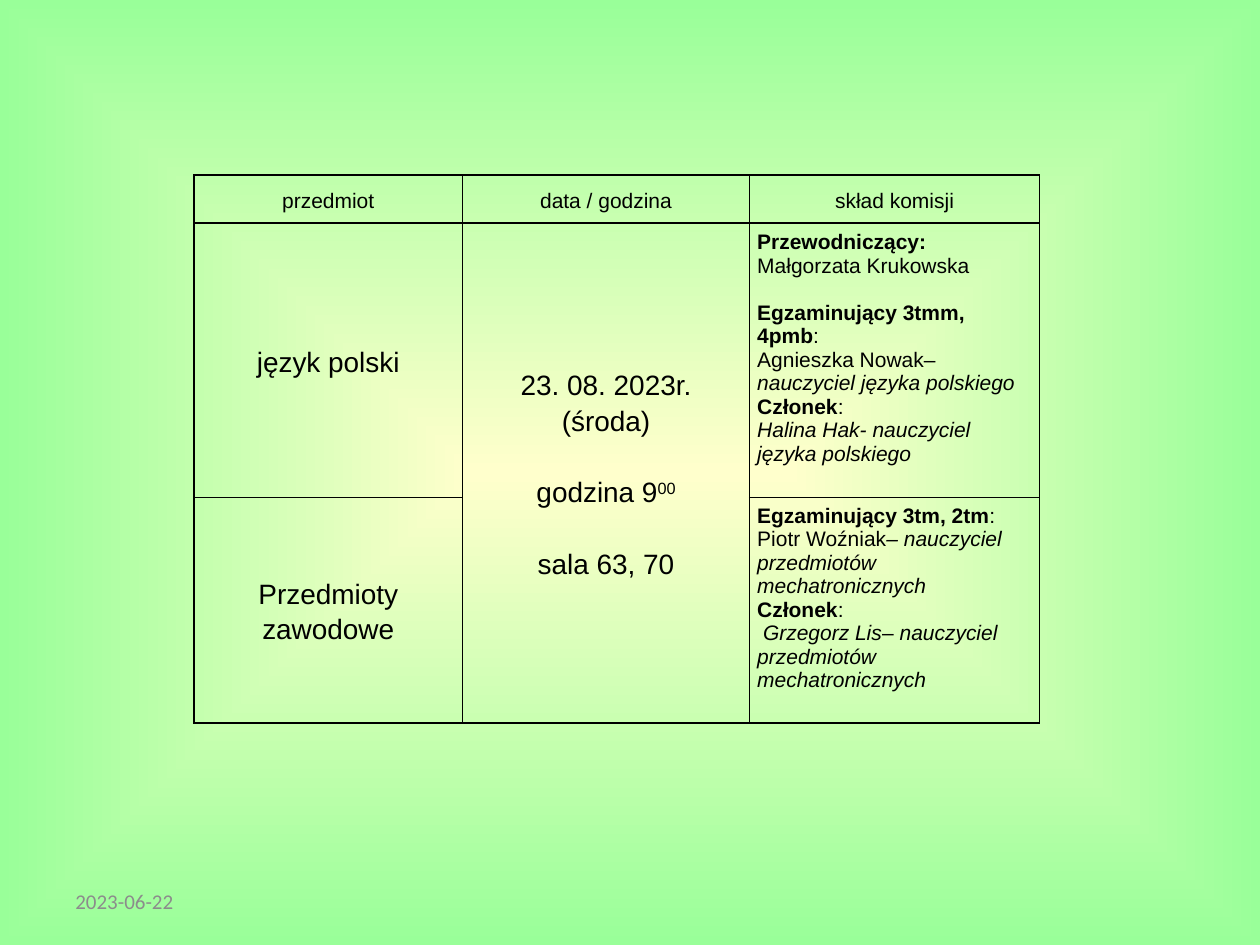
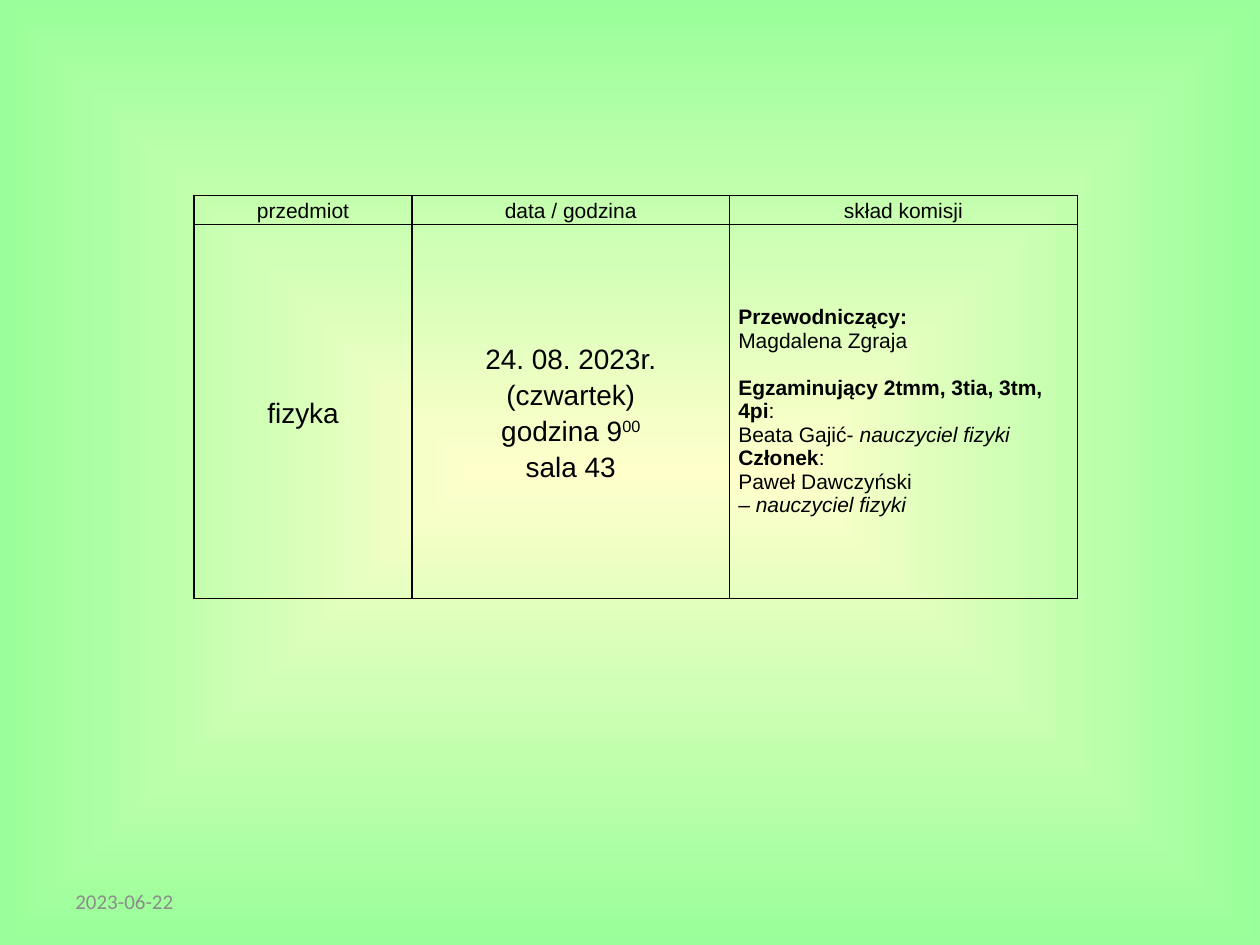
from dataclasses import dataclass

from lxml.etree import SubElement
from pptx import Presentation
from pptx.dml.color import RGBColor as Color
from pptx.enum.text import MSO_ANCHOR as Anchor, PP_ALIGN as Align
from pptx.oxml import parse_xml
from pptx.oxml.ns import nsdecls, qn
from pptx.util import Inches, Pt


@dataclass(frozen=True)
class Theme:
    centre: str = "FFFFCC"
    edge: str = "99FF99"
    ink: str = "000000"
    muted: str = "8C8C8C"
    body_font: str = "Arial"
    date_font: str = "Calibri"
    small: int = 12
    large: int = 16
    centred_spacing: float = 1.15
    small_gap: float = 13.4
    large_gap: float = 20.5
    border: float = 1


THEME = Theme()
DATE = "2023-06-22"
HEADINGS = ["przedmiot", "data / godzina", "skład komisji"]
BOLD, ITALIC, RAISED, GAP = "bold", "italic", "raised", "gap"

HOUR = ["godzina 9", ("00", RAISED)]
CHAIR = [("Przewodniczący:", BOLD)]
MEMBER = [("Członek", BOLD), ":"]

EXAMS = [
    {
        "origin": (1.54, 1.39),
        "columns": [2.13, 2.28, 2.3],
        "rows": [0.38, 2.15, 1.71],
        "inset": 0.06,
        "foot": 0.19,
        "subjects": ["język polski", "Przedmioty zawodowe"],
        "time": [["23. 08. 2023r."], ["(środa)"], GAP, HOUR, GAP, ["sala 63, 70"]],
        "boards": [
            [
                CHAIR,
                ["Małgorzata Krukowska"],
                GAP,
                [("Egzaminujący 3tmm, 4pmb", BOLD), ":"],
                ["Agnieszka Nowak– ", ("nauczyciel języka polskiego", ITALIC)],
                MEMBER,
                [("Halina Hak- nauczyciel języka polskiego", ITALIC)],
            ],
            [
                [("Egzaminujący 3tm, 2tm", BOLD), ":"],
                ["Piotr Woźniak", ("– nauczyciel przedmiotów mechatronicznych", ITALIC)],
                MEMBER,
                [(" Grzegorz Lis", ITALIC), "– ", ("nauczyciel", ITALIC)],
                [("przedmiotów mechatronicznych", ITALIC)],
            ],
        ],
    },
    {
        "origin": (1.54, 1.55),
        "columns": [1.73, 2.52, 2.76],
        "rows": [0.21, 2.97],
        "inset": 0.07,
        "foot": 0,
        "subjects": ["fizyka"],
        "time": [["24. 08. 2023r."], ["(czwartek)"], HOUR, ["sala 43"]],
        "boards": [
            [
                CHAIR,
                ["Magdalena Zgraja"],
                GAP,
                [("Egzaminujący 2tmm, 3tia, 3tm, 4pi", BOLD), ":"],
                ["Beata Gajić- ", ("nauczyciel fizyki", ITALIC)],
                MEMBER,
                ["Paweł Dawczyński"],
                [("– nauczyciel fizyki", ITALIC)],
            ],
        ],
    },
]


def apply(target, values):
    for name, value in values.items():
        setattr(target, name, value)


def paint_background(master):
    fill = master.background.fill
    fill.gradient()
    for stop, tone, position in zip(fill.gradient_stops, (THEME.centre, THEME.edge), (0, 1)):
        stop.color.rgb = Color.from_string(tone)
        stop.position = position
    direction = next(master._element.iter(qn("a:lin")))
    direction.getparent().replace(direction, parse_xml(
        f'<a:path {nsdecls("a")} path="shape">'
        '<a:fillToRect l="50000" t="50000" r="50000" b="50000"/></a:path>'))


def add_span(para, text, style, size, font, colour):
    span = para.add_run()
    span.text = text
    apply(span.font, {"name": font, "size": Pt(size),
                      "bold": style == BOLD, "italic": style == ITALIC})
    span.font.color.rgb = Color.from_string(colour)
    if style == RAISED:
        span._r.get_or_add_rPr().set("baseline", "30000")


def write(frame, lines, size, centred):
    frame.word_wrap = True
    para, gap_due = None, False
    for line in lines:
        if line == GAP:
            gap_due = True
            continue
        para = frame.add_paragraph() if para else frame.paragraphs[0]
        apply(para, {"alignment": Align.CENTER if centred else Align.LEFT,
                     "line_spacing": THEME.centred_spacing if centred else 1.0})
        if gap_due:
            para.space_before = Pt(THEME.large_gap if centred else THEME.small_gap)
            gap_due = False
        for part in line:
            text, style = (part, None) if isinstance(part, str) else part
            add_span(para, text, style, size, THEME.body_font, THEME.ink)


def frame_cell(cell, inset):
    apply(cell, {"margin_left": Inches(inset), "margin_right": Inches(inset),
                 "margin_top": 0, "margin_bottom": 0,
                 "vertical_anchor": Anchor.MIDDLE})
    properties = cell._tc.get_or_add_tcPr()
    for side in ("a:lnL", "a:lnR", "a:lnT", "a:lnB"):
        line = SubElement(properties, qn(side), w=str(Pt(THEME.border)))
        solid = SubElement(line, qn("a:solidFill"))
        SubElement(solid, qn("a:srgbClr"), val=THEME.ink)
    cell.fill.background()


def add_exam_table(page, exam):
    columns, rows = exam["columns"], exam["rows"]
    left, top = exam["origin"]
    table = page.shapes.add_table(
        len(rows), len(columns), Inches(left), Inches(top),
        Inches(sum(columns)), Inches(sum(rows))).table
    apply(table, {"first_row": False, "horz_banding": False})
    for column, width in zip(table.columns, columns):
        column.width = Inches(width)
    for row, height in zip(table.rows, rows):
        row.height = Inches(height)
    for cell in table.iter_cells():
        frame_cell(cell, exam["inset"])
    if len(rows) > 2:
        table.cell(1, 1).merge(table.cell(len(rows) - 1, 1))

    for index, heading in enumerate(HEADINGS):
        write(table.cell(0, index).text_frame, [[heading]], THEME.small, True)
    write(table.cell(1, 1).text_frame, exam["time"], THEME.large, True)
    for index, (subject, board) in enumerate(zip(exam["subjects"], exam["boards"]), 1):
        write(table.cell(index, 0).text_frame, [[subject]], THEME.large, True)
        board_cell = table.cell(index, 2)
        board_cell.margin_bottom = Inches(exam["foot"])
        write(board_cell.text_frame, board, THEME.small, False)


def add_date(page):
    box = page.shapes.add_textbox(Inches(0.5), Inches(6.95), Inches(2.33), Inches(0.4))
    apply(box.text_frame, {"word_wrap": True, "vertical_anchor": Anchor.MIDDLE})
    add_span(box.text_frame.paragraphs[0], DATE, None,
             THEME.small, THEME.date_font, THEME.muted)


def main():
    deck = Presentation()
    apply(deck, {"slide_width": Inches(10), "slide_height": Inches(7.5)})
    paint_background(deck.slide_master)
    for exam in EXAMS:
        page = deck.slides.add_slide(deck.slide_layouts[6])
        add_date(page)
        add_exam_table(page, exam)
    deck.save("out.pptx")


if __name__ == "__main__":
    main()
